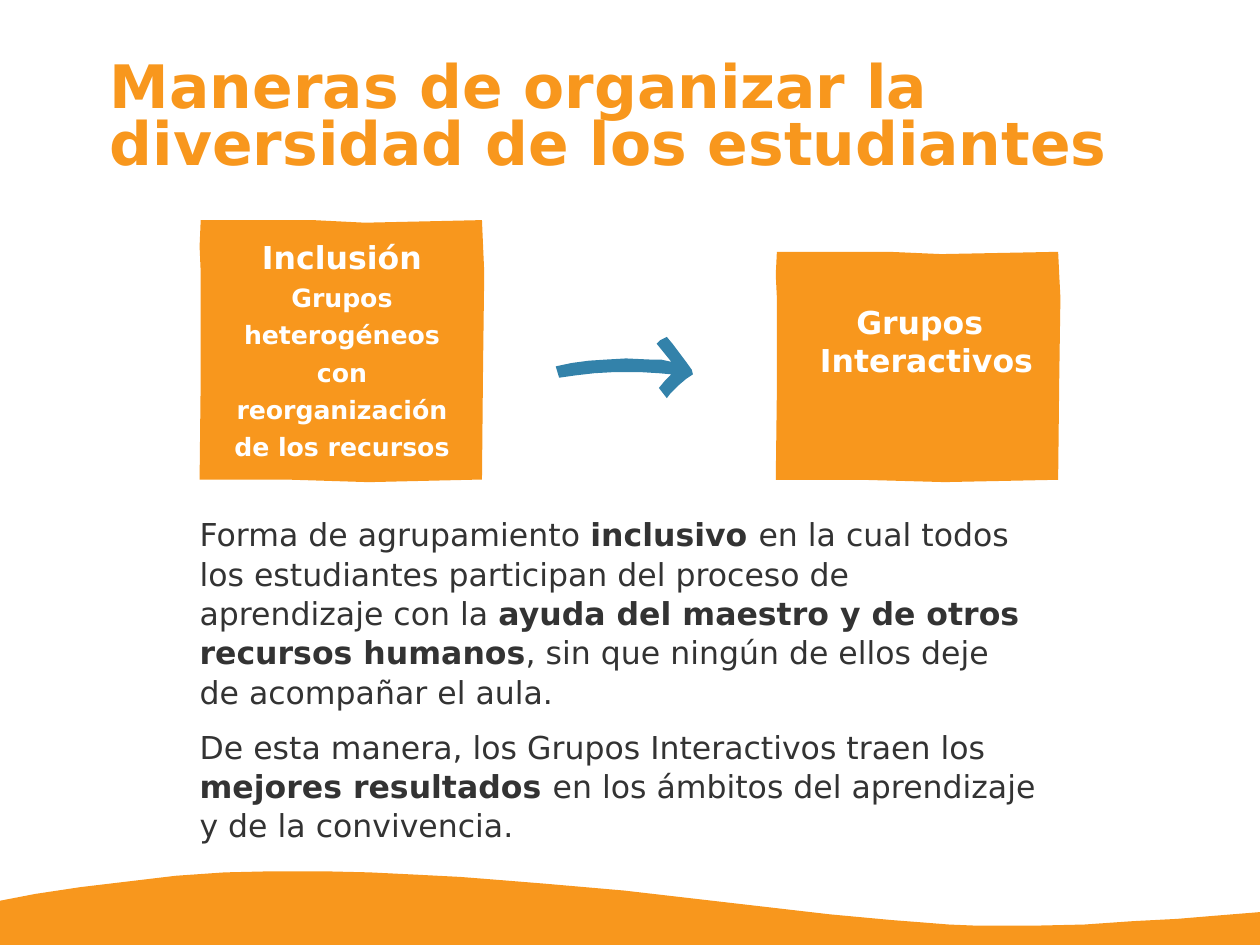
"""Build the slide on ways to organise student diversity."""
from pptx import Presentation
from pptx.dml.color import RGBColor
from pptx.enum.text import MSO_ANCHOR, MSO_AUTO_SIZE, PP_ALIGN
from pptx.oxml.xmlchemy import OxmlElement
from pptx.util import Inches, Pt

TOP = MSO_ANCHOR.TOP
FIXED = MSO_AUTO_SIZE.NONE
LEFT = PP_ALIGN.LEFT
CENTER = PP_ALIGN.CENTER

FONT = "DejaVu Sans"
ORANGE, BLUE, WHITE, GRAY = "F8971D", "3382AA", "FFFFFF", "333333"
WIDE, HIGH = 11.11, 8.33

TITLE = [[("Maneras de organizar la diversidad de los estudiantes", 38, True)]]
INCLUSION = [[
    ("Inclusión ", 20, True),
    ("Grupos heterogéneos con reorganización de los recursos", 16, True),
]]
GROUPS = [[("Grupos Interactivos", 20, True)]]
BODY = [
    [
        ("Forma de agrupamiento ", 20, False),
        ("inclusivo ", 20, True),
        ("en la cual todos los estudiantes participan del proceso de "
         "aprendizaje con la ", 20, False),
        ("ayuda del maestro y de otros recursos humanos", 20, True),
        (", sin que ningún de ellos deje de acompañar el aula.", 20, False),
    ],
    [
        ("De esta manera, los Grupos Interactivos traen los ", 20, False),
        ("mejores resultados ", 20, True),
        ("en los ámbitos del aprendizaje y de la convivencia.", 20, False),
    ],
]

WAVE = [
    (0, 7.94), (0.31, 7.88), (0.71, 7.82), (1.13, 7.77), (1.55, 7.72),
    (1.98, 7.69), (2.41, 7.68), (2.84, 7.68), (3.26, 7.69), (3.67, 7.71),
    (4.06, 7.73), (4.44, 7.76), (4.81, 7.79), (5.5, 7.85), (7.32, 8.06),
    (7.86, 8.11), (8.12, 8.13), (8.37, 8.15), (8.62, 8.16), (9.1, 8.16),
    (9.56, 8.15), (9.99, 8.12), (10.38, 8.1), (10.74, 8.07), (WIDE, 8.04),
    (WIDE, HIGH), (0, HIGH),
]
ARROW = [
    (4.9, 3.23), (5.04, 3.2), (5.19, 3.18), (5.34, 3.17), (5.52, 3.16),
    (5.74, 3.17), (5.83, 3.17), (5.92, 3.19), (5.79, 3.03), (5.82, 3),
    (5.88, 2.97), (5.93, 3.03), (5.99, 3.11), (6.05, 3.19), (6.1, 3.26),
    (6.11, 3.3), (6.05, 3.34), (5.98, 3.4), (5.91, 3.47), (5.88, 3.51),
    (5.81, 3.42), (5.86, 3.36), (5.92, 3.3), (5.81, 3.29), (5.64, 3.28),
    (5.42, 3.28), (5.24, 3.29), (5.07, 3.31), (4.93, 3.33),
]
CARD = [
    (0.01, 0), (0, 0.1), (0.01, 0.2), (0.01, 0.6), (0, 0.99), (0.75, 0.99),
    (1.49, 1), (2.49, 0.99), (2.5, 0.55), (2.51, 0.2), (2.5, 0.1),
    (2.49, 0), (1.46, 0.01), (1, 0),
]
CARDS = [(1.76, 1.94, 2.31), (6.84, 2.22, 2.03)]


def color(code):
    return RGBColor.from_string(code)


def draw(slide, dots, code):
    spots = [(Inches(x), Inches(y)) for x, y in dots]
    pen = slide.shapes.build_freeform(*spots[0])
    pen.add_line_segments(spots[1:], close=True)
    shape = pen.convert_to_shape()
    shape.shadow.inherit = False
    shape.fill.solid()
    shape.fill.fore_color.rgb = color(code)
    shape.line.fill.background()


def write(shape, text, box, code, align=LEFT, lead=1.0, gap=0, indent=0):
    shape.left, shape.top, shape.width, shape.height = map(Inches, box)
    frame = shape.text_frame
    frame.word_wrap = True
    frame.auto_size = FIXED
    frame.vertical_anchor = TOP
    frame.margin_left = frame.margin_right = 0
    frame.margin_top = frame.margin_bottom = 0
    for i, parts in enumerate(text):
        para = frame.add_paragraph() if i else frame.paragraphs[0]
        para.alignment = align
        para.line_spacing = lead
        para.space_before = Pt(gap if i else 0)
        para.space_after = Pt(0)
        props = para._p.get_or_add_pPr()
        props.set("marL", str(Inches(0.01)))
        props.set("indent", str(Inches(indent)))
        props.append(OxmlElement("a:buNone"))
        for words, size, bold in parts:
            run = para.add_run()
            run.text = words
            run.font.name = FONT
            run.font.size = Pt(size)
            run.font.bold = bold
            run.font.color.rgb = color(code)


def label(slide, text, box, **style):
    write(slide.shapes.add_textbox(0, 0, 0, 0), text, box, WHITE, **style)


def main():
    deck = Presentation()
    deck.slide_width, deck.slide_height = Inches(WIDE), Inches(HIGH)
    slide = deck.slides.add_slide(deck.slide_layouts[1])
    title, body = slide.placeholders
    write(title, TITLE, (0.96, 0.56, 9.19, 1), ORANGE, lead=0.79)
    write(body, BODY, (1.75, 4.53, 7.4, 3.05), GRAY, lead=1.04, gap=10)
    draw(slide, WAVE, ORANGE)
    draw(slide, ARROW, BLUE)
    for left, top, tall in CARDS:
        draw(slide, [(left + x, top + y * tall) for x, y in CARD], ORANGE)
    label(slide, INCLUSION, (1.97, 2.02, 2.08, 2.06), align=CENTER, lead=1.23)
    label(slide, GROUPS, (7.22, 2.67, 2.08, 1.08), indent=0.32)
    deck.save("out.pptx")


if __name__ == "__main__":
    main()
